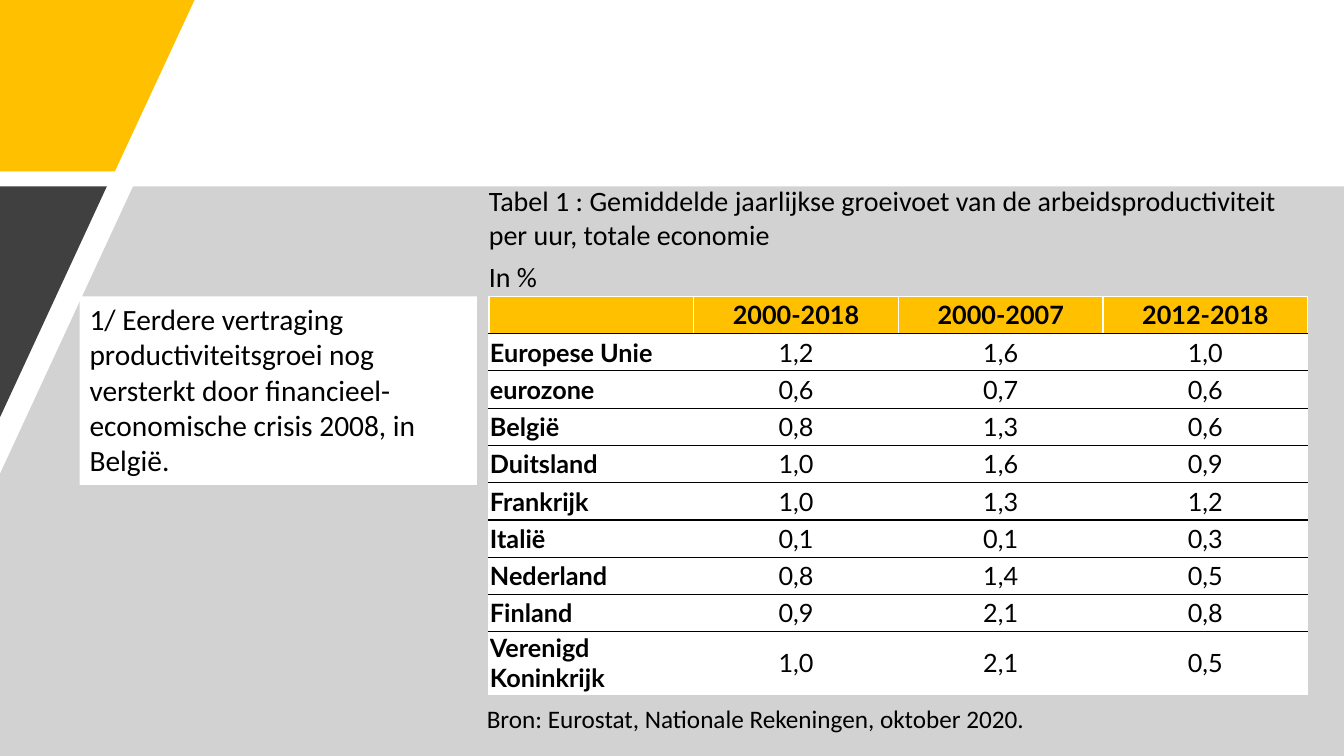
from dataclasses import dataclass
from typing import Optional

from lxml.etree import SubElement
from pptx import Presentation
from pptx.dml.color import RGBColor
from pptx.enum.shapes import MSO_SHAPE
from pptx.enum.text import MSO_ANCHOR, MSO_AUTO_SIZE, PP_ALIGN
from pptx.oxml.ns import qn
from pptx.util import Emu, Pt

PX = 9144  # EMU per px, 100 px to the inch
YELLOW, DARK, GREY = "FFC000", "404040", "A6A6A6"
WHITE, BLACK = "FFFFFF", "000000"


@dataclass
class Panel:
    points: list[tuple[int, int]]
    color: str
    alpha: Optional[int] = None


@dataclass
class TextBlock:
    place: tuple[int, int, int, int]
    lines: list[str]
    size: int
    space_after: int = 0
    fill: Optional[str] = None


PANELS = [
    Panel([(0, 0), (193, 0), (114, 170), (0, 170)], YELLOW),
    Panel([(132, 185), (1333, 185), (1333, 750), (0, 750), (0, 470)], GREY, 50),
    Panel([(0, 185), (106, 185), (0, 414)], DARK),
]

TEXTS = [
    TextBlock((79, 294, 394, 187),
              ["1/ Eerdere vertraging productiviteitsgroei nog versterkt door "
               "financieel-economische crisis 2008, in België."], 21, fill=WHITE),
    TextBlock((475, 177, 813, 119),
              ["Tabel 1 : Gemiddelde jaarlijkse groeivoet van de "
               "arbeidsproductiviteit per uur, totale economie", "In %"], 20, 6),
    TextBlock((473, 693, 667, 40),
              ["Bron: Eurostat, Nationale Rekeningen, oktober 2020."], 18, 6),
]

GROWTH = [
    ("", "2000-2018", "2000-2007", "2012-2018"),
    ("Europese Unie", "1,2", "1,6", "1,0"),
    ("eurozone", "0,6", "0,7", "0,6"),
    ("België", "0,8", "1,3", "0,6"),
    ("Duitsland", "1,0", "1,6", "0,9"),
    ("Frankrijk", "1,0", "1,3", "1,2"),
    ("Italië", "0,1", "0,1", "0,3"),
    ("Nederland", "0,8", "1,4", "0,5"),
    ("Finland", "0,9", "2,1", "0,8"),
    ("Verenigd Koninkrijk", "1,0", "2,1", "0,5"),
]


def px(length: int) -> Emu:
    return Emu(length * PX)


def rgb(color: str) -> RGBColor:
    return RGBColor.from_string(color)


def set_format(target, values: dict) -> None:
    for name, value in values.items():
        setattr(target, name, value)


def paint(shape, color: str) -> None:
    shape.shadow.inherit = False
    shape.fill.solid()
    shape.fill.fore_color.rgb = rgb(color)
    shape.line.fill.background()


def write(para, text: str, font: str, size: int, bold: bool = False) -> None:
    span = para.add_run()
    span.text = text
    set_format(span.font, {"name": font, "size": Pt(size), "bold": bold})
    span.font.color.rgb = rgb(BLACK)


def draw_panel(page, panel: Panel) -> None:
    start, *rest = panel.points
    outline = page.shapes.build_freeform(*start, scale=PX)
    outline.add_line_segments(rest, close=True)
    shape = outline.convert_to_shape()
    paint(shape, panel.color)
    if panel.alpha is not None:
        color = shape._element.spPr.find(".//" + qn("a:srgbClr"))
        SubElement(color, qn("a:alpha"), val=str(panel.alpha * 1000))


def draw_text(page, block: TextBlock) -> None:
    place = [px(length) for length in block.place]
    if block.fill:
        box = page.shapes.add_shape(MSO_SHAPE.RECTANGLE, *place)
        paint(box, block.fill)
    else:
        box = page.shapes.add_textbox(*place)
    frame = box.text_frame
    set_format(frame, {"word_wrap": True, "vertical_anchor": MSO_ANCHOR.TOP,
                       "auto_size": MSO_AUTO_SIZE.SHAPE_TO_FIT_TEXT})
    for number, line in enumerate(block.lines):
        para = frame.add_paragraph() if number else frame.paragraphs[0]
        set_format(para, {"alignment": PP_ALIGN.LEFT,
                          "space_after": Pt(block.space_after)})
        write(para, line, "Calibri", block.size)


def add_borders(cell, top: str, bottom: str) -> None:
    properties = cell._tc.get_or_add_tcPr()
    edges = {"a:lnL": WHITE, "a:lnR": WHITE, "a:lnT": top, "a:lnB": bottom}
    for tag, color in edges.items():
        line = SubElement(properties, qn(tag), w=str(Pt(1)))
        fill = SubElement(line, qn("a:solidFill"))
        SubElement(fill, qn("a:srgbClr"), val=color)


def draw_table(page, rows: list[tuple[str, ...]]) -> None:
    last = len(rows) - 1
    table = page.shapes.add_table(len(rows), len(rows[0]), px(485), px(294),
                                  px(813), px(395)).table
    table.horz_banding = False
    for column in table.columns:
        column.width = px(203)
    for r, values in enumerate(rows):
        table.rows[r].height = px(58 if r == last else 37)
        for c, value in enumerate(values):
            cell = table.cell(r, c)
            add_borders(cell, BLACK if r else WHITE, WHITE if r == last else BLACK)
            cell.fill.solid()
            cell.fill.fore_color.rgb = rgb(WHITE if r else YELLOW)
            margins = ("margin_left", "margin_right", "margin_top", "margin_bottom")
            set_format(cell, dict.fromkeys(margins, px(1)))
            cell.vertical_anchor = MSO_ANCHOR.MIDDLE
            para = cell.text_frame.paragraphs[0]
            para.alignment = PP_ALIGN.CENTER if c else PP_ALIGN.LEFT
            if value:
                write(para, value, "Lato", 18, bold=r == 0 or c == 0)


def main() -> None:
    deck = Presentation()
    set_format(deck, {"slide_width": px(1333), "slide_height": px(750)})
    page = deck.slides.add_slide(deck.slide_layouts[6])
    # Background panels
    for panel in PANELS:
        draw_panel(page, panel)
    # Statement, table heading and source
    for block in TEXTS:
        draw_text(page, block)
    # Growth rates
    draw_table(page, GROWTH)
    deck.save("out.pptx")


if __name__ == "__main__":
    main()
